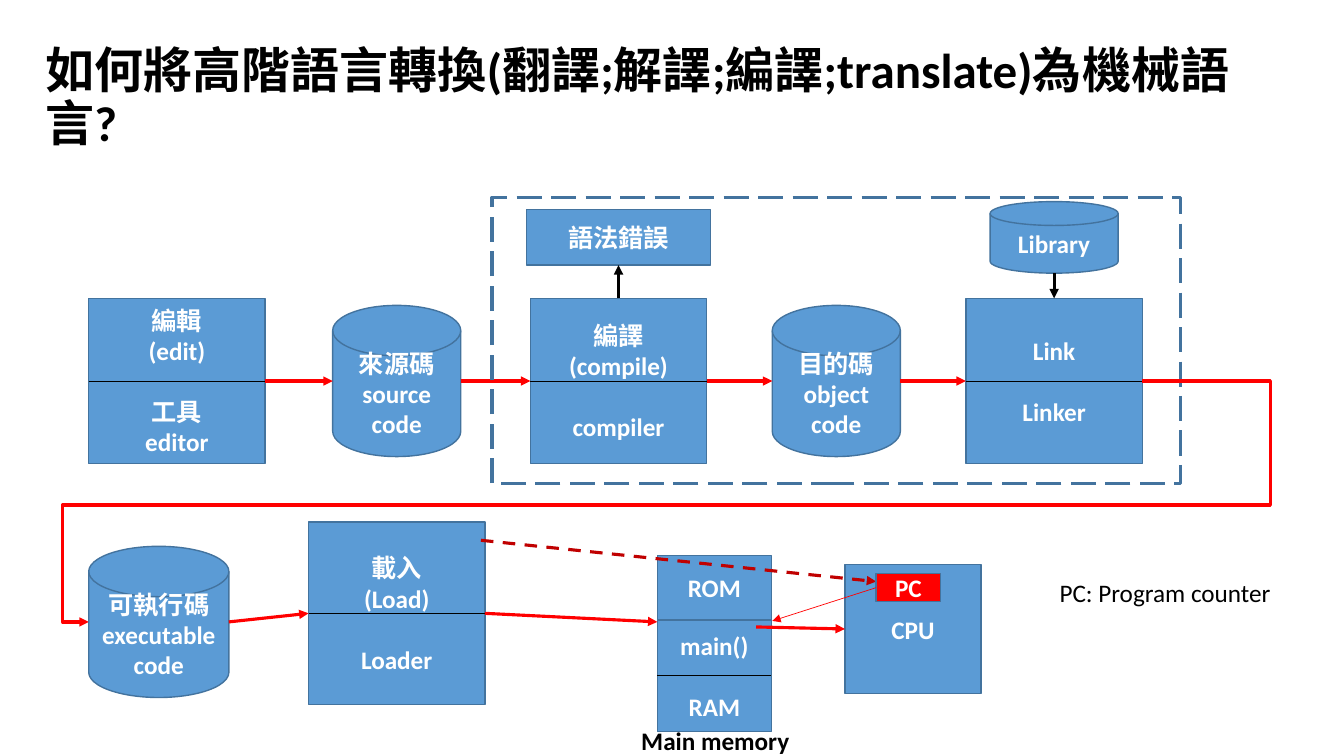
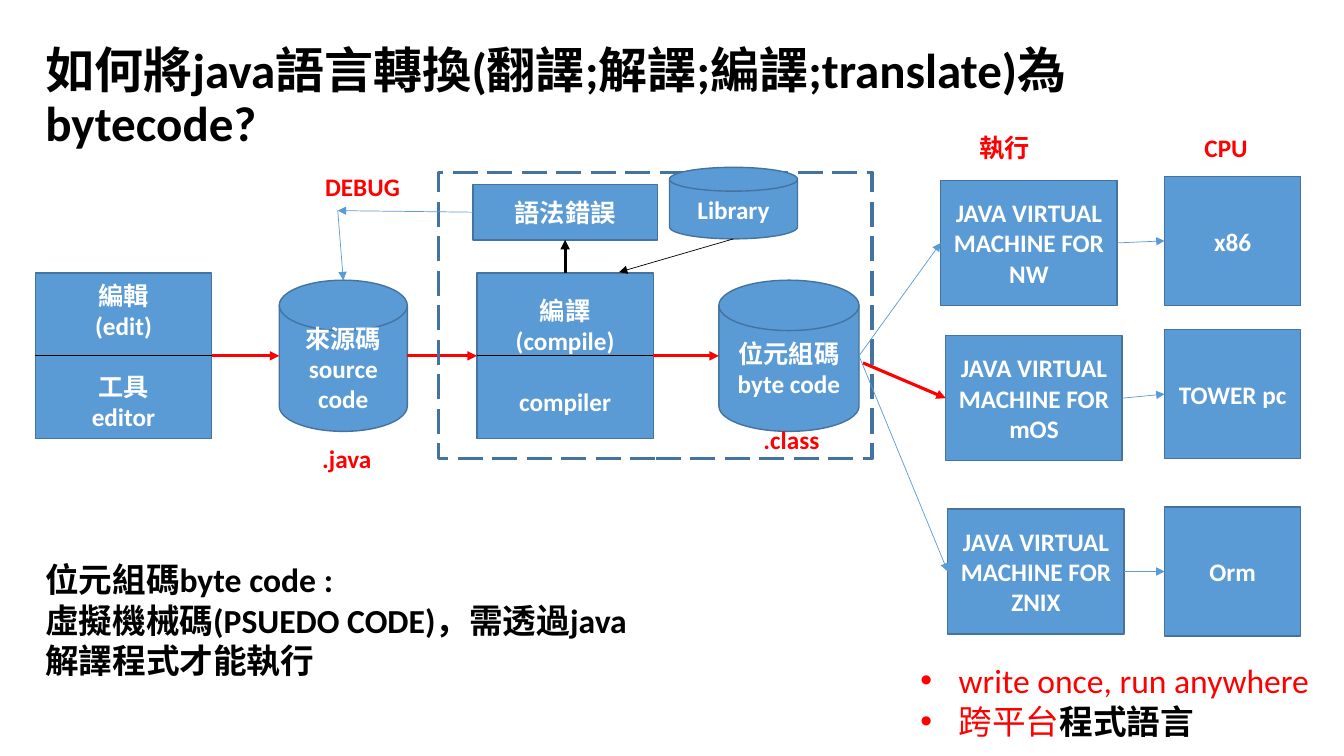
from dataclasses import dataclass

from lxml import etree
from pptx import Presentation
from pptx import util as u
from pptx.dml.color import RGBColor
from pptx.enum import dml, shapes, text
from pptx.oxml import ns

PX = u.Inches(1) // 100
TOP, LEFT, BOTTOM, RIGHT = range(4)
RECT = shapes.MSO_SHAPE.RECTANGLE
DISK = shapes.MSO_SHAPE.FLOWCHART_MAGNETIC_DISK
CENTER = text.PP_ALIGN.CENTER
STAGE_W, STAGE_H = 175, 164
DISK_W, DISK_H = 127, 150


@dataclass(frozen=True)
class Theme:
    font: str = "Calibri"
    blue: str = "5B9BD5"
    edge: str = "43739E"
    red: str = "FF0000"
    dark_red: str = "C00000"
    black: str = "000000"
    white: str = "FFFFFF"
    title: int = 35
    note: int = 24
    body: int = 18
    blank_line: int = 22
    thin: float = 0.5
    border: float = 1
    thick: float = 2.25


THEME = Theme()


def px(*lengths):
    return [length * PX for length in lengths]


def rgb(color):
    return RGBColor.from_string(color)


def add_bullet(paragraph):
    properties = paragraph._p.get_or_add_pPr()
    properties.set("marL", str(38 * PX))
    properties.set("indent", str(-38 * PX))
    etree.SubElement(properties, ns.qn("a:buFont"), typeface="Arial")
    etree.SubElement(properties, ns.qn("a:buChar"), char="•")


def write(frame, lines, *, size=THEME.body, color=THEME.white, bold=True, align=CENTER,
          spacing=None, gap_at=None, bullets=False):
    for index, line in enumerate(lines):
        paragraph = frame.paragraphs[0] if index == 0 else frame.add_paragraph()
        paragraph.alignment = align
        if spacing:
            paragraph.line_spacing = spacing
        if index == gap_at:
            paragraph.space_before = u.Pt(THEME.blank_line)
        if bullets:
            add_bullet(paragraph)
        runs = [(line, color, bold)] if isinstance(line, str) else line
        for words, run_color, run_bold in runs:
            run = paragraph.add_run()
            run.text = words
            run.font.name = THEME.font
            run.font.size = u.Pt(size)
            run.font.bold = run_bold
            run.font.color.rgb = rgb(run_color)


def style_line(line, color, width, dash=None, arrow=False):
    line.color.rgb = rgb(color)
    line.width = u.Pt(width)
    if dash:
        line.dash_style = dash
    if arrow:
        etree.SubElement(line._get_or_add_ln(), ns.qn("a:tailEnd"), type="triangle")


def add_block(slide, at, *lines, kind=RECT, fill=THEME.blue, gap_at=None):
    block = slide.shapes.add_shape(kind, *px(*at))
    block.shadow.inherit = False
    block.fill.solid()
    block.fill.fore_color.rgb = rgb(fill)
    style_line(block.line, THEME.edge, THEME.border)
    block.text_frame.vertical_anchor = text.MSO_ANCHOR.MIDDLE
    block.text_frame.word_wrap = True
    write(block.text_frame, lines, gap_at=gap_at)
    return block


def add_split_block(slide, at, upper, lower):
    block = add_block(slide, at, *upper, *lower, gap_at=len(upper))
    link(slide, (block, LEFT), (block, RIGHT), THEME.black, THEME.thin, arrow=False)
    return block


def add_dashed_frame(slide, at):
    frame = slide.shapes.add_shape(RECT, *px(*at))
    frame.shadow.inherit = False
    frame.fill.background()
    style_line(frame.line, THEME.edge, THEME.thick, dml.MSO_LINE.LONG_DASH)


def add_label(slide, at, *lines, wrap=True, **style):
    label = slide.shapes.add_textbox(*px(*at))
    label.text_frame.word_wrap = wrap
    label.text_frame.auto_size = text.MSO_AUTO_SIZE.SHAPE_TO_FIT_TEXT
    write(label.text_frame, lines, **style)


def locate(end):
    if isinstance(end[0], int):
        return px(*end)
    block, side = end
    middle_x = block.left + block.width // 2
    middle_y = block.top + block.height // 2
    return {
        TOP: (middle_x, block.top),
        LEFT: (block.left, middle_y),
        BOTTOM: (middle_x, block.top + block.height),
        RIGHT: (block.left + block.width, middle_y),
    }[side]


def joins(end):
    return not isinstance(end[0], int) and end[0].auto_shape_type == RECT


def link(slide, start, end, color=THEME.red, width=THEME.thick, dash=None, arrow=True):
    line = slide.shapes.add_connector(
        shapes.MSO_CONNECTOR.STRAIGHT, *locate(start), *locate(end))
    if joins(start):
        line.begin_connect(*start)
    if joins(end):
        line.end_connect(*end)
    style_line(line.line, color, width, dash, arrow)
    etree.SubElement(line._element.spPr, ns.qn("a:effectLst"))


def add_route(slide, start, *corners):
    builder = slide.shapes.build_freeform(*start, scale=PX)
    builder.add_line_segments(corners, close=False)
    route = builder.convert_to_shape()
    route.shadow.inherit = False
    route.fill.background()
    style_line(route.line, THEME.red, THEME.thick, arrow=True)


def add_titled_slide(deck, heading):
    slide = deck.slides.add_slide(deck.slide_layouts[5])
    title = slide.shapes.title
    title.left, title.top, title.width, title.height = px(35, 26, 1242, 145)
    title.text_frame.auto_size = text.MSO_AUTO_SIZE.NONE
    title.text_frame.word_wrap = True
    title.text_frame.vertical_anchor = text.MSO_ANCHOR.MIDDLE
    write(title.text_frame, [heading], size=THEME.title, color=THEME.black,
          align=text.PP_ALIGN.LEFT, spacing=0.9)
    return slide


def add_compile_stages(slide, left, top, frame_width):
    editor = add_split_block(slide, (left, top, STAGE_W, STAGE_H),
                             ["編輯", "(edit)"], ["工具", "editor"])
    source = add_block(slide, (left + 242, top + 7, DISK_W, DISK_H),
                       "來源碼source code", kind=DISK)
    compiler = add_split_block(slide, (left + 438, top, STAGE_W, STAGE_H),
                               ["編譯", "(compile)"], ["compiler"])
    syntax_error = add_block(slide, (left + 434, top - 88, 183, 55), "語法錯誤")
    link(slide, (compiler, TOP), (syntax_error, BOTTOM), THEME.black)
    link(slide, (editor, RIGHT), (source, LEFT))
    link(slide, (source, RIGHT), (compiler, LEFT))
    add_dashed_frame(slide, (left + 400, top - 100, frame_width, 284))
    return source, compiler, syntax_error


def add_library(slide, left, top):
    return add_block(slide, (left, top, DISK_W, 71), "Library", kind=DISK)


def build_machine_code(deck):
    slide = add_titled_slide(deck, "如何將高階語言轉換(翻譯;解譯;編譯;translate)為機械語言?")
    _, compiler, _ = add_compile_stages(slide, 88, 296, 683)
    object_code = add_block(slide, (766, 303, DISK_W, DISK_H), "目的碼object code", kind=DISK)
    linker = add_split_block(slide, (958, 296, STAGE_W, STAGE_H), ["Link"], ["Linker"])
    library = add_library(slide, 982, 200)
    link(slide, (compiler, RIGHT), (object_code, LEFT))
    link(slide, (object_code, RIGHT), (linker, LEFT))
    link(slide, (library, BOTTOM), (linker, TOP), THEME.black)

    add_route(slide, (1133, 378), (1260, 378), (1260, 501), (62, 501), (62, 617), (88, 617))
    executable = add_block(slide, (88, 542, 139, DISK_H), "可執行碼executable code", kind=DISK)
    loader = add_split_block(slide, (306, 518, STAGE_W, 181), ["載入", "(Load)"], ["Loader"])
    add_block(slide, (652, 551, 113, 64), "ROM")
    add_split_block(slide, (652, 615, 113, 111), ["main()"], ["RAM"])
    cpu = add_block(slide, (838, 560, 135, 128), "CPU")
    link(slide, (executable, RIGHT), (loader, LEFT))
    link(slide, (loader, RIGHT), (652, 617))
    link(slide, (477, 536), (869, 577), THEME.dark_red, dash=dml.MSO_LINE.DASH)
    link(slide, (750, 622), (cpu, LEFT))
    counter = add_block(slide, (869, 569, 64, 28), "PC", fill=THEME.red)
    link(slide, (counter, LEFT), (766, 616), width=THEME.thin)
    add_label(slide, (608, 715, 203, 40), "Main memory", color=THEME.black)
    add_label(slide, (1041, 568, 232, 40), "PC: Program counter", wrap=False,
              color=THEME.black, bold=False, align=text.PP_ALIGN.LEFT)


def build_bytecode(deck):
    slide = add_titled_slide(deck, "如何將java語言轉換(翻譯;解譯;編譯;translate)為bytecode?")
    source, compiler, syntax_error = add_compile_stages(slide, 35, 271, 430)
    library = add_library(slide, 664, 166)
    bytecode = add_block(slide, (713, 278, 139, DISK_H), "位元組碼", "byte code", kind=DISK)
    link(slide, (compiler, RIGHT), (bytecode, LEFT))
    link(slide, (library, BOTTOM), (614, 270), THEME.black, THEME.thin)

    debug_turn = (335, 209)
    link(slide, (syntax_error, LEFT), debug_turn, THEME.blue, THEME.thin)
    link(slide, debug_turn, (source, TOP), THEME.blue, THEME.thin)

    platforms = [
        ("NW", "x86", (933, 179), 175, True),
        ("mOS", "TOWER pc", (938, 333), 327, False),
        ("ZNIX", "Orm", (940, 505), 503, True),
    ]
    for system, processor, place, processor_top, thin in platforms:
        machine = add_block(slide, (*place, STAGE_W, 124), f"JAVA VIRTUAL MACHINE FOR {system}")
        cpu = add_block(slide, (1155, processor_top, 135, 128), processor)
        link(slide, (machine, RIGHT), (cpu, LEFT), THEME.blue, THEME.thin)
        if thin:
            link(slide, (bytecode, RIGHT), (machine, LEFT), THEME.blue, THEME.thin)
        else:
            link(slide, (856, 360), (machine, LEFT))

    labels = [
        ("執行", 961, 126, 71),
        ("CPU", 1169, 126, 94),
        (".class", 738, 416, 94),
        (".java", 297, 435, 94),
        ("DEBUG", 299, 165, 121),
    ]
    for words, left, top, width in labels:
        add_label(slide, (left, top, width, 40), words, color=THEME.red)

    add_label(slide, (35, 550, 617, 162), "位元組碼byte code :",
              "虛擬機械碼(PSUEDO CODE)，需透過java解譯程式才能執行",
              size=THEME.note, color=THEME.black, align=text.PP_ALIGN.LEFT)
    add_label(slide, (903, 650, 409, 91), "write once, run anywhere",
              [("跨平台", THEME.red, False), ("程式語言", THEME.black, True)],
              wrap=False, size=THEME.note, color=THEME.red, bold=False,
              align=text.PP_ALIGN.LEFT, bullets=True)


def main():
    deck = Presentation()
    deck.slide_width, deck.slide_height = px(1333, 750)
    build_machine_code(deck)
    build_bytecode(deck)
    deck.save("out.pptx")


if __name__ == "__main__":
    main()
